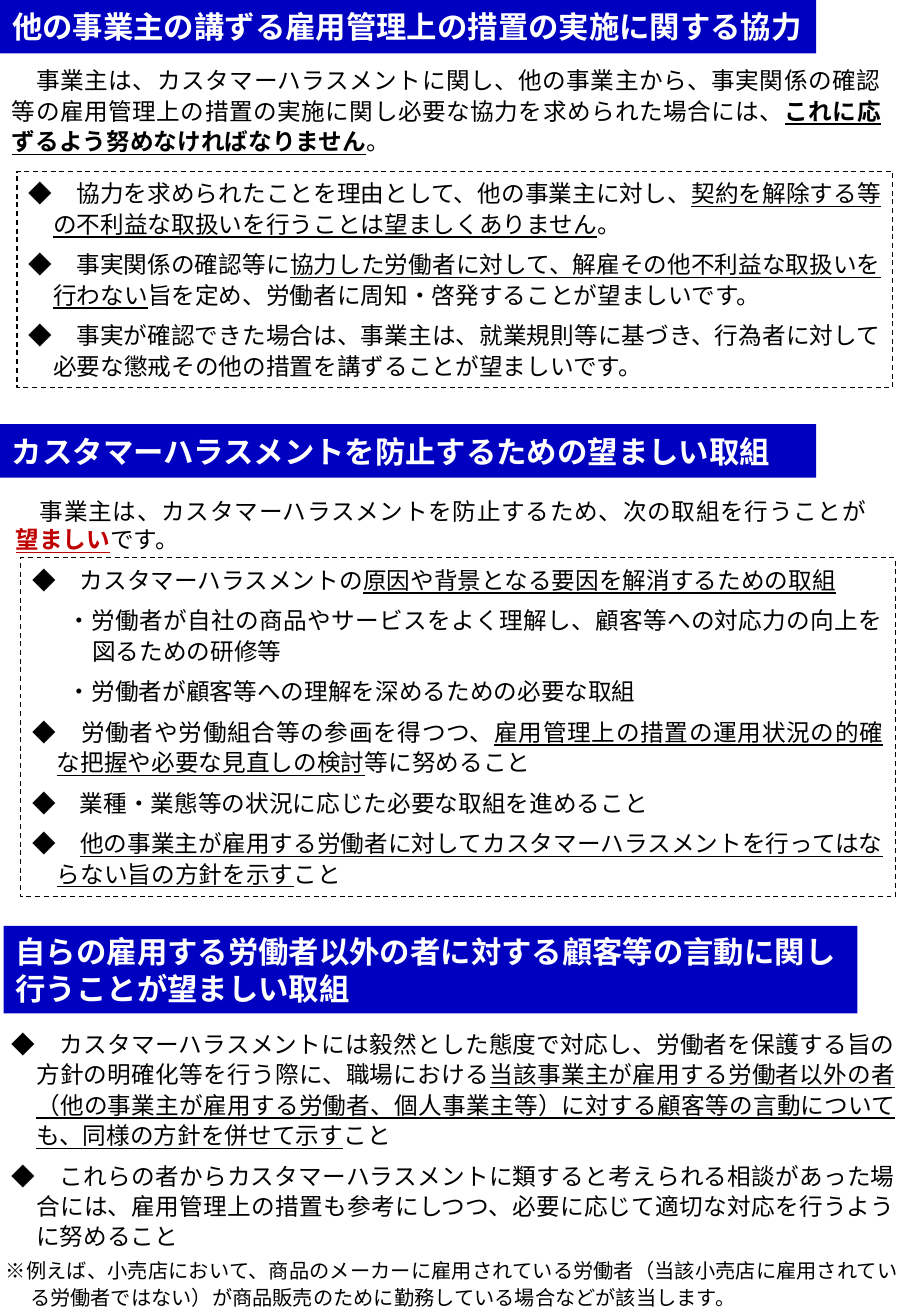
from dataclasses import dataclass
from pptx import Presentation
from pptx.dml.color import RGBColor
from pptx.enum.dml import MSO_LINE
from pptx.enum.shapes import MSO_SHAPE
from pptx.enum.text import MSO_ANCHOR, MSO_AUTO_SIZE, PP_ALIGN
from pptx.oxml.ns import qn
from pptx.util import Inches, Pt
from lxml.etree import SubElement


@dataclass(frozen=True)
class Theme:
    font: str = "Noto Sans CJK JP"
    blue: RGBColor = RGBColor(0x00, 0x00, 0xC0)
    red: RGBColor = RGBColor(0xC0, 0x00, 0x00)
    black: RGBColor = RGBColor(0, 0, 0)
    white: RGBColor = RGBColor(255, 255, 255)
    head: int = 18
    body: int = 14
    note: int = 12
    lead: int = 18
    tight: int = 16
    gap: int = 6
    hang: float = 0.2
    inner: float = 0.49


THEME = Theme()
WIDTH, HEIGHT = 7.5, 10.83
COL, ROW = WIDTH / 100, HEIGHT / 100


@dataclass(frozen=True)
class Area:
    """A rectangle in columns and rows, each a hundredth of the slide."""
    x: float
    y: float
    w: float
    h: float

    def inset(self, x, y, w, h):
        return Area(self.x + x, self.y + y, w, h)

    def place(self):
        return (Inches(self.x * COL), Inches(self.y * ROW),
                Inches(self.w * COL), Inches(self.h * ROW))


def add_run(para, text, size, color, bold=False, line=False):
    run = para.add_run()
    run.text = text
    font = run.font
    font.size, font.bold, font.underline = Pt(size), bold, line
    font.color.rgb = color
    font.name = THEME.font
    SubElement(run._r.get_or_add_rPr(), qn("a:ea"), typeface=THEME.font)


def add_runs(para, runs, size=THEME.body):
    """Style letters: b bold, u underlined, r red."""
    for text, style in runs:
        color = THEME.red if "r" in style else THEME.black
        add_run(para, text, size, color, "b" in style, "u" in style)


def set_para(para, lead=None, gap=0, left=0, hang=0):
    para.alignment = PP_ALIGN.JUSTIFY
    para.space_before = Pt(gap)
    if lead:
        para.line_spacing = Pt(lead)
    props = para._p.get_or_add_pPr()
    props.set("marL", str(Inches(left)))
    props.set("indent", str(-Inches(hang)))


def set_frame(shape, anchor):
    frame = shape.text_frame
    frame.word_wrap = True
    frame.auto_size = MSO_AUTO_SIZE.NONE
    frame.vertical_anchor = anchor
    frame.margin_left = frame.margin_right = Inches(0.1)
    frame.margin_top = frame.margin_bottom = Inches(0.05)
    return frame


def add_rect(slide, area):
    shape = slide.shapes.add_shape(MSO_SHAPE.RECTANGLE, *area.place())
    shape.shadow.inherit = False
    return shape


def add_head(slide, area, text, shape=None):
    if shape is None:
        shape = add_rect(slide, area)
    shape.left, shape.top, shape.width, shape.height = area.place()
    shape.fill.solid()
    shape.fill.fore_color.rgb = THEME.blue
    shape.line.fill.background()
    para = set_frame(shape, MSO_ANCHOR.MIDDLE).paragraphs[0]
    para.alignment = PP_ALIGN.LEFT
    add_run(para, text, THEME.head, THEME.white, True)


def add_prose(slide, area, runs, size=THEME.body, lead=None, hang=0):
    box = slide.shapes.add_textbox(*area.place())
    para = set_frame(box, MSO_ANCHOR.TOP).paragraphs[0]
    set_para(para, lead, 0, hang, hang)
    add_runs(para, runs, size)


def add_points(slide, area, points, framed=True):
    """Diamond points; a point that opens with ・ is set one level in."""
    if framed:
        box = add_rect(slide, area)
        box.fill.background()
        box.line.color.rgb = THEME.black
        box.line.width = Pt(0.75)
        box.line.dash_style = MSO_LINE.DASH
    else:
        box = slide.shapes.add_textbox(*area.place())
    frame = set_frame(box, MSO_ANCHOR.TOP)
    for index, runs in enumerate(points):
        para = frame.add_paragraph() if index else frame.paragraphs[0]
        inner = runs[0][0].startswith("・")
        left = THEME.inner if inner else THEME.hang
        set_para(para, THEME.lead, THEME.gap, left, THEME.hang)
        add_runs(para, runs if inner else [("◆　", "b"), *runs])


def add_help(slide, area):
    add_head(slide, area.inset(0, 0, 89.6, 4.06),
             "他の事業主の講ずる雇用管理上の措置の実施に関する協力", slide.shapes.title)
    add_prose(slide, area.inset(0, 4.43, 98, 7.94), [
        ("　事業主は、カスタマーハラスメントに関し、他の事業主から、事実関係の確認等の"
         "雇用管理上の措置の実施に関し必要な協力を求められた場合には、", ""),
        ("これに応ずるよう努めなければなりません", "bu"), ("。", "")], lead=THEME.lead)
    add_points(slide, area.inset(1.87, 13.02, 96.13, 16.44), [
        [("協力を求められたことを理由として、他の事業主に対し、", ""),
         ("契約を解除する等の不利益な取扱いを行うことは望ましくありません", "u"), ("。", "")],
        [("事実関係の確認等に", ""),
         ("協力した労働者に対して、解雇その他不利益な取扱いを行わない", "u"),
         ("旨を定め、労働者に周知・啓発することが望ましいです。", "")],
        [("事実が確認できた場合は、事業主は、就業規則等に基づき、"
          "行為者に対して必要な懲戒その他の措置を講ずることが望ましいです。", "")]])


def add_steps(slide, area):
    add_head(slide, area.inset(0, 0, 89.6, 4.06),
             "カスタマーハラスメントを防止するための望ましい取組")
    add_prose(slide, area.inset(0.4, 5.07, 96, 5.26), [
        ("　事業主は、カスタマーハラスメントを防止するため、次の取組を行うことが", ""),
        ("望ましい", "bur"), ("です。", "")])
    add_points(slide, area.inset(2.27, 10.15, 96, 25.76), [
        [("カスタマーハラスメントの", ""),
         ("原因や背景となる要因を解消するための取組", "u")],
        [("・労働者が自社の商品やサービスをよく理解し、"
          "顧客等への対応力の向上を図るための研修等", "")],
        [("・労働者が顧客等への理解を深めるための必要な取組", "")],
        [("労働者や労働組合等の参画を得つつ、", ""),
         ("雇用管理上の措置の運用状況の的確な把握や必要な見直しの検討", "u"),
         ("等に努めること", "")],
        [("業種・業態等の状況に応じた必要な取組を進めること", "")],
        [("他の事業主が雇用する労働者に対してカスタマーハラスメントを"
          "行ってはならない旨の方針を示す", "u"), ("こと", "")]])


def add_others(slide, area):
    add_head(slide, area.inset(0.4, 0, 93.73, 6.65),
             "自らの雇用する労働者以外の者に対する顧客等の言動に関し行うことが望ましい取組")
    add_points(slide, area.inset(0, 7.29, 99.6, 18.01), [
        [("カスタマーハラスメントには毅然とした態度で対応し、労働者を保護する旨の"
          "方針の明確化等を行う際に、職場における", ""),
         ("当該事業主が雇用する労働者以外の者（他の事業主が雇用する労働者、"
          "個人事業主等）に対する顧客等の言動についても、同様の方針を併せて示す", "u"),
         ("こと", "")],
        [("これらの者からカスタマーハラスメントに類すると考えられる相談があった場合には、"
          "雇用管理上の措置も参考にしつつ、必要に応じて適切な対応を行うように努めること", "")]],
        framed=False)
    add_prose(slide, area.inset(-0.67, 24.56, 100.67, 5.08), [
        ("※例えば、小売店において、商品のメーカーに雇用されている労働者"
         "（当該小売店に雇用されている労働者ではない）が"
         "商品販売のために勤務している場合などが該当します。", "")],
        THEME.note, THEME.tight, THEME.hang)


def main():
    deck = Presentation()
    deck.slide_width, deck.slide_height = Inches(WIDTH), Inches(HEIGHT)
    slide = deck.slides.add_slide(deck.slide_layouts[5])
    add_help(slide, Area(0, 0, 100, 29.46))
    add_steps(slide, Area(0, 32.23, 100, 35.91))
    add_others(slide, Area(0, 70.36, 100, 29.64))
    deck.save("out.pptx")


if __name__ == "__main__":
    main()
